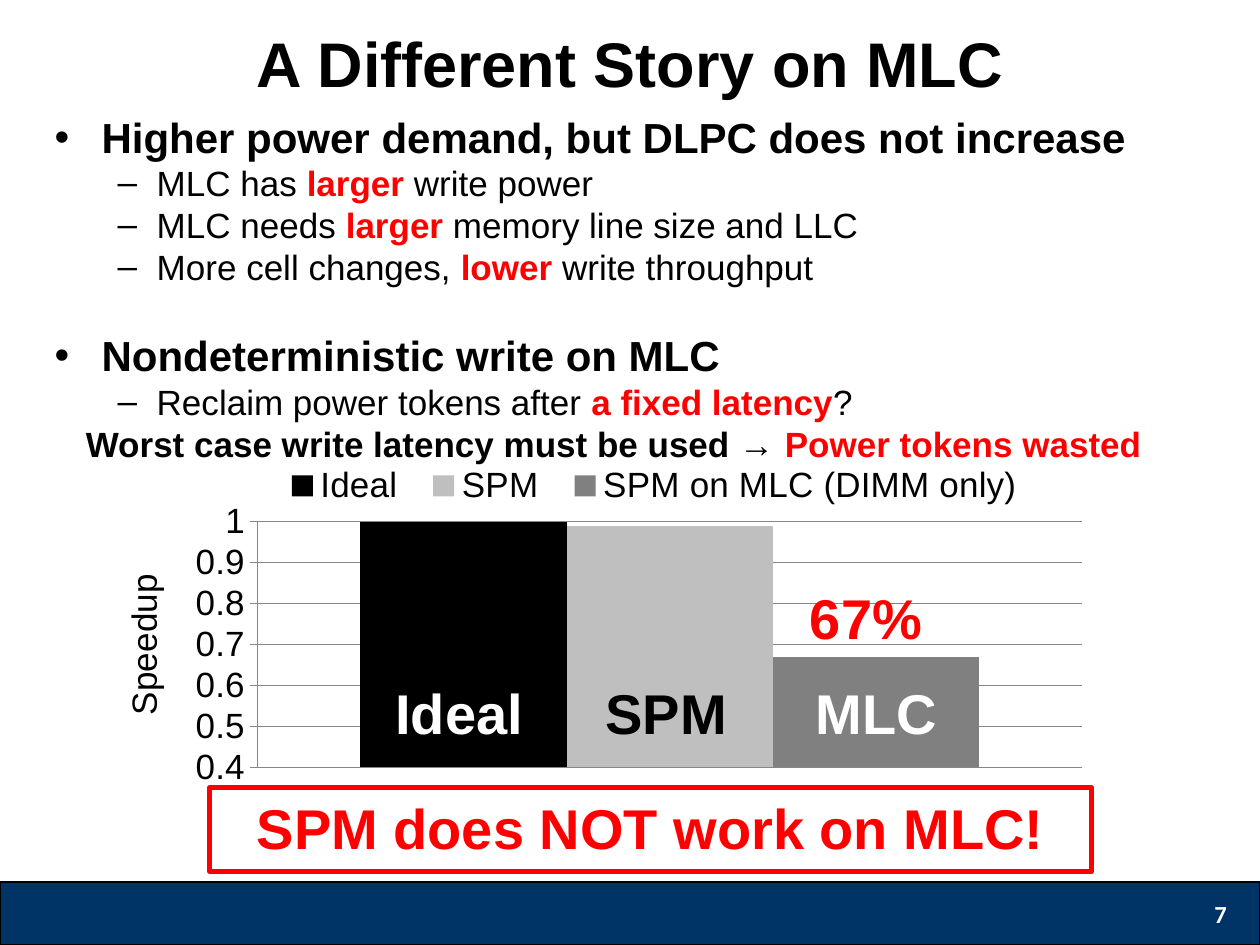
import pptx
import pptx.util
import pptx.chart.data
import pptx.dml.color
import pptx.enum.chart
import pptx.enum.shapes
import pptx.enum.text
import pptx.oxml
import pptx.oxml.ns
from pptx.util import Cm, Pt

BLACK, WHITE, RED, NAVY, GRID = "000000", "FFFFFF", "FF0000", "003366", "868686"
ALIGN = pptx.enum.text.PP_ALIGN


def color(value):
    return pptx.dml.color.RGBColor.from_string(value)


def add_runs(paragraph, size, runs, font="Arial"):
    for text, fill, bold in runs:
        run = paragraph.add_run()
        run.text = text
        run.font.name = font
        run.font.size = Pt(size)
        run.font.bold = bold
        run.font.color.rgb = color(fill)


presentation = pptx.Presentation()
presentation.slide_width = Cm(25.4)
presentation.slide_height = Cm(19.05)
slide = presentation.slides.add_slide(presentation.slide_layouts[5])
shapes = slide.shapes

title = shapes.title
title.left, title.top, title.width, title.height = Cm(0.64), Cm(0.42), Cm(24.13), Cm(1.69)
title.text_frame.vertical_anchor = pptx.enum.text.MSO_ANCHOR.MIDDLE
title.text_frame.paragraphs[0].alignment = ALIGN.CENTER
add_runs(title.text_frame.paragraphs[0], 36, [("A Different Story on MLC", BLACK, True)])

footer = shapes.add_shape(pptx.enum.shapes.MSO_SHAPE.RECTANGLE, 0, Cm(17.78), Cm(25.4), Cm(1.27))
footer.shadow.inherit = False
footer.fill.solid()
footer.fill.fore_color.rgb = color(NAVY)
footer.line.color.rgb = color(BLACK)
footer.line.width = Pt(0.75)

body = shapes.add_textbox(Cm(0.85), Cm(2.12), Cm(23.92), Cm(15.45))
body.text_frame.word_wrap = True
bullets = [
    (0, 0, [("Higher power demand, but DLPC does not increase", BLACK, True)]),
    (1, 0, [("MLC has ", BLACK, False), ("larger", RED, True), (" write power", BLACK, False)]),
    (1, 0, [("MLC needs ", BLACK, False), ("larger", RED, True),
            (" memory line size and LLC", BLACK, False)]),
    (1, 0, [("More cell changes, ", BLACK, False), ("lower", RED, True),
            (" write throughput", BLACK, False)]),
    (0, 24, [("Nondeterministic write on MLC", BLACK, True)]),
    (1, 0, [("Reclaim power tokens after ", BLACK, False), ("a fixed latency", RED, True),
            ("?", BLACK, False)]),
]
levels = [(24, "•", 0.95, -0.95), (20, "–", 2.06, -0.79)]
namespace = pptx.oxml.ns.nsdecls("a")
for number, (level, space, runs) in enumerate(bullets):
    size, symbol, margin, indent = levels[level]
    paragraph = body.text_frame.add_paragraph() if number else body.text_frame.paragraphs[0]
    paragraph.level = level
    paragraph.space_before = Pt(space)
    add_runs(paragraph, size, runs)
    properties = paragraph._p.get_or_add_pPr()
    properties.set("marL", str(Cm(margin)))
    properties.set("indent", str(Cm(indent)))
    for markup in (f'<a:buFont {namespace} typeface="Arial"/>',
                   f'<a:buChar {namespace} char="{symbol}"/>'):
        properties.append(pptx.oxml.parse_xml(markup))

chart_data = pptx.chart.data.CategoryChartData()
chart_data.categories = ["1"]
series_styles = [("Ideal", 1, BLACK), ("SPM", 0.99, "BFBFBF"),
                 ("SPM on MLC (DIMM only)", 0.67, "808080")]
for name, value, fill in series_styles:
    chart_data.add_series(name, [value])
chart = shapes.add_chart(pptx.enum.chart.XL_CHART_TYPE.COLUMN_CLUSTERED,
                         Cm(1.7), Cm(8.69), Cm(20.52), Cm(7.62), chart_data).chart
chart.font.name = "Arial"
chart.font.size = Pt(20)
chart.font.color.rgb = color(BLACK)
chart.has_title = False
chart.has_legend = True
chart.legend.position = pptx.enum.chart.XL_LEGEND_POSITION.TOP
chart.legend.include_in_layout = False
chart.legend.font.size = Pt(20)
plot = chart.plots[0]
plot.gap_width = 100
plot.overlap = 0
plot.vary_by_categories = False
for series, (name, value, fill) in zip(plot.series, series_styles):
    series.format.fill.solid()
    series.format.fill.fore_color.rgb = color(fill)
chart.category_axis.visible = False
axis = chart.value_axis
axis.minimum_scale, axis.maximum_scale, axis.major_unit = 0.4, 1, 0.1
axis.major_tick_mark = pptx.enum.chart.XL_TICK_MARK.CROSS
axis.tick_labels.font.size = Pt(20)
axis.tick_labels.number_format = "General"
axis.tick_labels.number_format_is_linked = False
axis.has_major_gridlines = True
for line in (axis.format.line, axis.major_gridlines.format.line):
    line.color.rgb = color(GRID)
    line.width = Pt(0.5)
add_runs(axis.axis_title.text_frame.paragraphs[0], 20, [("Speedup", BLACK, False)])

plot_area = chart._chartSpace.chart.plotArea
legend = chart.legend._element
layouts = [(plot_area, 0, '<c:layoutTarget val="inner"/>', (0.17, 0.24, 0.81, 0.65)),
           (legend, 1, "", (0.18, 0.08, 0.76, 0.13))]
for element, position, target, (x, y, width, height) in layouts:
    for old_layout in element.findall(pptx.oxml.ns.qn("c:layout")):
        element.remove(old_layout)
    element.insert(position, pptx.oxml.parse_xml(
        f'<c:layout {pptx.oxml.ns.nsdecls("c")}><c:manualLayout>{target}'
        f'<c:xMode val="edge"/><c:yMode val="edge"/><c:x val="{x}"/><c:y val="{y}"/>'
        f'<c:w val="{width}"/><c:h val="{height}"/></c:manualLayout></c:layout>'))

conclusion = shapes.add_shape(pptx.enum.shapes.MSO_SHAPE.RECTANGLE,
                              Cm(4.23), Cm(15.88), Cm(17.78), Cm(1.69))
conclusion.shadow.inherit = False
conclusion.fill.solid()
conclusion.fill.fore_color.rgb = color(WHITE)
conclusion.line.color.rgb = color(RED)
conclusion.line.width = Pt(3)
conclusion.text_frame.vertical_anchor = pptx.enum.text.MSO_ANCHOR.TOP
conclusion.text_frame.paragraphs[0].alignment = ALIGN.CENTER
add_runs(conclusion.text_frame.paragraphs[0], 32, [("SPM does NOT work on MLC!", RED, True)])

labels = [
    (1.48, 8.4, 22.01, 1.11, ALIGN.LEFT, 20, "Arial",
     [("Worst case write latency must be used → ", BLACK, True),
      ("Power tokens wasted", RED, True)]),
    (15.45, 11.64, 4.02, 1.62, ALIGN.CENTER, 32, "Arial", [("67%", RED, True)]),
    (7.25, 13.55, 4.02, 1.62, ALIGN.CENTER, 32, "Arial", [("Ideal", WHITE, True)]),
    (11.63, 13.55, 3.6, 1.62, ALIGN.CENTER, 32, "Arial", [("SPM", BLACK, True)]),
    (15.66, 13.55, 4.02, 1.62, ALIGN.CENTER, 32, "Arial", [("MLC", WHITE, True)]),
    (19.05, 17.99, 5.93, 1.02, ALIGN.RIGHT, 14, "Calibri", [("7", WHITE, True)]),
]
for left, top, width, height, alignment, size, font, runs in labels:
    label = shapes.add_textbox(Cm(left), Cm(top), Cm(width), Cm(height))
    label.text_frame.word_wrap = True
    label.text_frame.paragraphs[0].alignment = alignment
    add_runs(label.text_frame.paragraphs[0], size, runs, font)

presentation.save("out.pptx")
